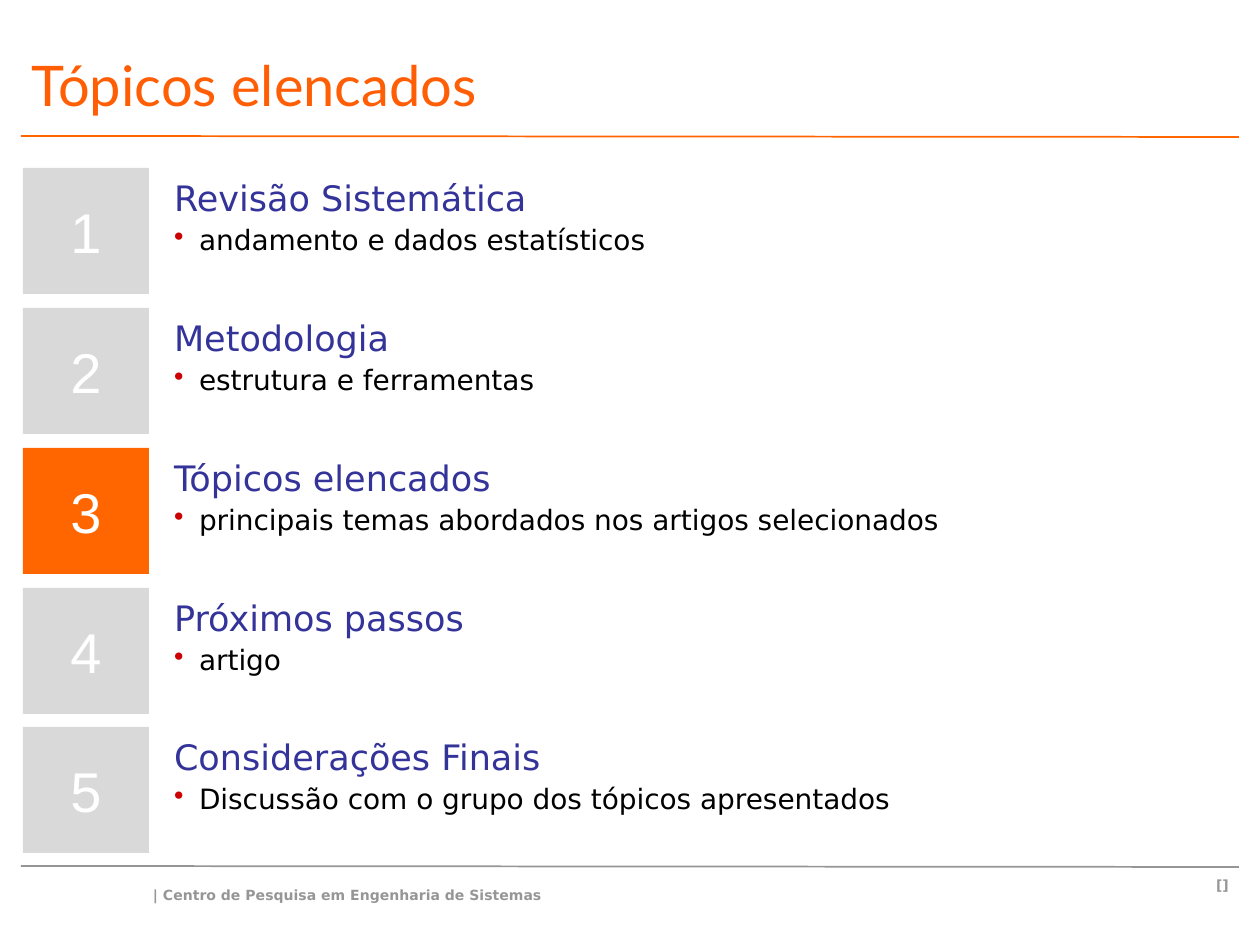
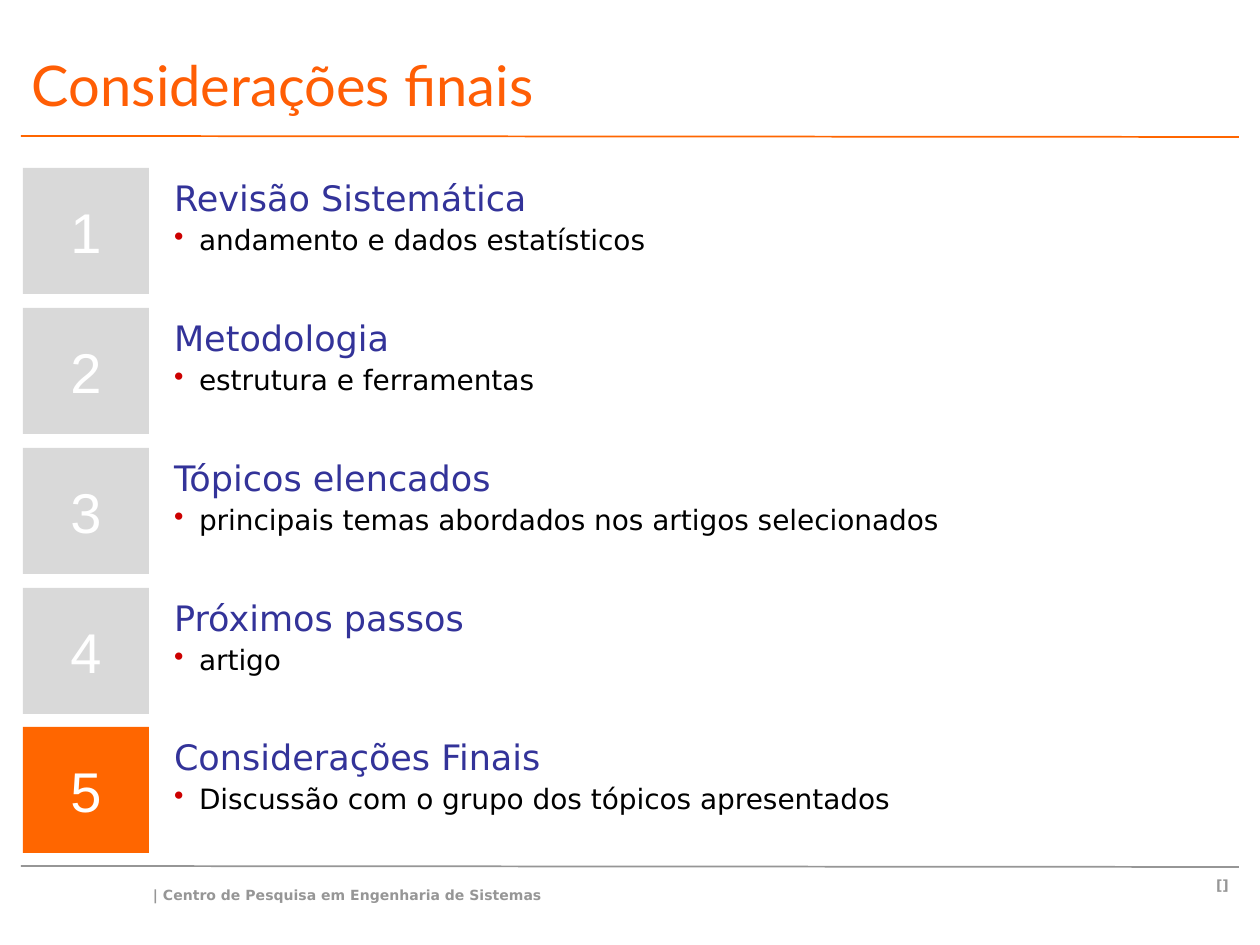
from lxml.etree import SubElement
from pptx import Presentation
from pptx.dml.color import RGBColor
from pptx.enum.shapes import MSO_CONNECTOR as Connector, MSO_SHAPE as Shape
from pptx.enum.text import MSO_ANCHOR as Anchor, PP_ALIGN as Align
from pptx.oxml.ns import qn
from pptx.util import Emu, Pt

PX_PER_INCH = 126
ORANGE, TITLE_ORANGE = "FF6600", "FF5E05"
GRAY, LIGHT_GRAY = "969696", "D9D9D9"
BLUE, RED, BLACK, WHITE = "333399", "CC0000", "000000", "FFFFFF"

TITLE_STYLE = dict(name="Lato", size=Pt(32), color=TITLE_ORANGE)
NUMBER_STYLE = dict(name="Arial", size=Pt(32), color=WHITE)
TOPIC_STYLE = dict(name="DejaVu Sans", size=Pt(20), color=BLUE)
DETAIL_STYLE = dict(name="DejaVu Sans", size=Pt(16), color=BLACK)
FOOTER_STYLE = dict(name="DejaVu Sans", size=Pt(8), color=GRAY, bold=True)

FOOTER = "| Centro de Pesquisa em Engenharia de Sistemas"
AGENDA = [
    ("Revisão Sistemática", "andamento e dados estatísticos"),
    ("Metodologia", "estrutura e ferramentas"),
    ("Tópicos elencados", "principais temas abordados nos artigos selecionados"),
    ("Próximos passos", "artigo"),
    ("Considerações Finais", "Discussão com o grupo dos tópicos apresentados"),
]
ROW_TOPS = [168, 308, 448, 588, 727]
ROW_HEIGHT = 126
BULLET_INDENT = 25
SLIDES = [("Tópicos elencados", 3), ("Considerações finais", 5)]


def px(length):
    return Emu(round(length * 914400 / PX_PER_INCH))


def rgb(hex_color):
    return RGBColor.from_string(hex_color)


def set_attributes(target, values):
    for attribute, value in values.items():
        setattr(target, attribute, value)


def set_insets(frame, left, top, right, bottom):
    set_attributes(frame, dict(margin_left=px(left), margin_top=px(top),
                               margin_right=px(right), margin_bottom=px(bottom)))


def write(paragraph, text, style, **layout):
    run = paragraph.add_run()
    run.text = text
    set_attributes(run.font, {key: value for key, value in style.items() if key != "color"})
    run.font.color.rgb = rgb(style["color"])
    set_attributes(paragraph, layout)


def add_bullet(paragraph):
    properties = paragraph._p.get_or_add_pPr()
    properties.set("marL", str(px(BULLET_INDENT)))
    properties.set("indent", str(-px(BULLET_INDENT)))
    color = SubElement(properties, qn("a:buClr"))
    SubElement(color, qn("a:srgbClr"), val=RED)
    SubElement(properties, qn("a:buChar"), char="•")


def add_text_frame(slide, box, insets, anchor=Anchor.TOP):
    frame = slide.shapes.add_textbox(*map(px, box)).text_frame
    set_attributes(frame, dict(word_wrap=True, vertical_anchor=anchor))
    set_insets(frame, *insets)
    return frame


def add_rule(slide, top, color):
    """Draw a full-width line that drops by one px to the right."""
    rule = slide.shapes.add_connector(Connector.STRAIGHT, *map(px, (21, top, 1239, top + 1)))
    rule.line.color.rgb = rgb(color)
    rule.line.width = Pt(1)
    SubElement(rule._element.spPr, qn("a:effectLst"))


def add_frame(slide, title):
    """Add the title, both rules and the footer that every slide has."""
    page_mark = add_text_frame(slide, (1182, 877, 81, 32), (5, 0, 5, 0))
    write(page_mark.paragraphs[0], "[]", FOOTER_STYLE, alignment=Align.CENTER)
    footer = add_text_frame(slide, (148, 887, 432, 32), (5, 0, 5, 0))
    write(footer.paragraphs[0], FOOTER, FOOTER_STYLE, space_before=Pt(5))
    add_rule(slide, 136, ORANGE)
    add_rule(slide, 866, GRAY)
    heading = add_text_frame(slide, (19, 0, 1220, 126), (13, 8, 18, 8), Anchor.BOTTOM)
    write(heading.paragraphs[0], title, TITLE_STYLE)


def add_number(slide, top, number, color):
    square = slide.shapes.add_shape(Shape.RECTANGLE, *map(px, (23, top, ROW_HEIGHT, ROW_HEIGHT)))
    square.shadow.inherit = False
    square.fill.solid()
    square.fill.fore_color.rgb = rgb(color)
    square.line.fill.background()
    frame = square.text_frame
    set_attributes(frame, dict(word_wrap=False, vertical_anchor=Anchor.MIDDLE))
    set_insets(frame, 13, 13, 13, 13)
    write(frame.paragraphs[0], str(number), NUMBER_STYLE, alignment=Align.CENTER)


def add_topic(slide, top, topic, detail):
    frame = add_text_frame(slide, (161, top, 1065, ROW_HEIGHT), (13, 13, 13, 13))
    write(frame.paragraphs[0], topic, TOPIC_STYLE, line_spacing=0.9)
    detail_line = frame.add_paragraph()
    write(detail_line, detail, DETAIL_STYLE, line_spacing=0.9, space_before=Pt(4.2))
    add_bullet(detail_line)


def add_agenda(slide, current):
    for number, top in enumerate(ROW_TOPS, 1):
        add_number(slide, top, number, ORANGE if number == current else LIGHT_GRAY)
    for top, (topic, detail) in zip(ROW_TOPS, AGENDA):
        add_topic(slide, top, topic, detail)


def main():
    deck = Presentation()
    deck.slide_width, deck.slide_height = px(1260), px(945)
    for title, current in SLIDES:
        slide = deck.slides.add_slide(deck.slide_layouts[6])
        add_frame(slide, title)
        add_agenda(slide, current)
    deck.save("out.pptx")


if __name__ == "__main__":
    main()
